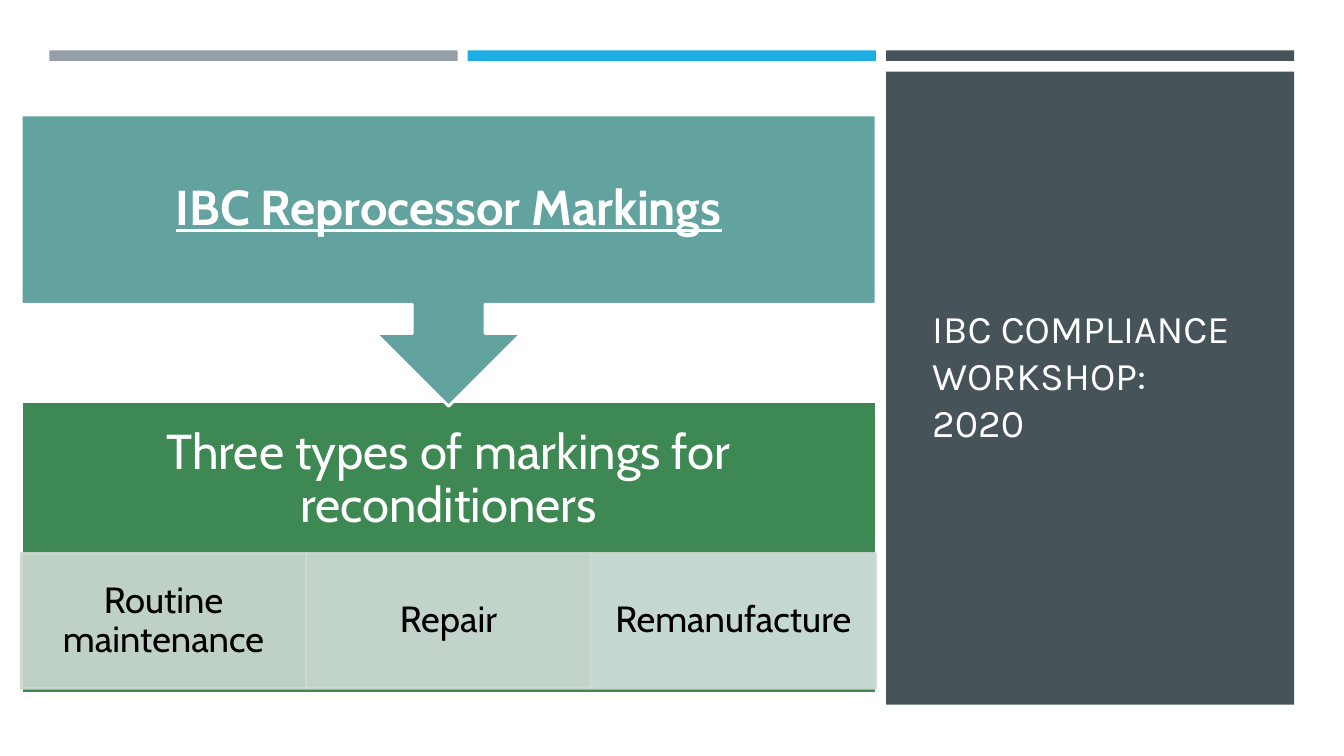
from dataclasses import dataclass

from lxml import etree
from pptx import Presentation
from pptx.dml.color import RGBColor
from pptx.enum.shapes import MSO_SHAPE as Preset
from pptx.enum.text import MSO_ANCHOR as Anchor, PP_ALIGN as Align
from pptx.oxml.ns import qn
from pptx.shapes.autoshape import Shape
from pptx.slide import Slide
from pptx.util import Pt

WHITE = RGBColor(0xFF, 0xFF, 0xFF)
TITLE_WHITE = RGBColor(0xFF, 0xFE, 0xFF)
BLACK = RGBColor(0, 0, 0)
SLATE = RGBColor(0x46, 0x53, 0x59)
GREY = RGBColor(0x96, 0x9F, 0xA7)
BLUE = RGBColor(0x1C, 0xAD, 0xE4)
GREEN = RGBColor(0x3E, 0x88, 0x53)
TEAL = RGBColor(0x62, 0xA3, 0x9F)
TILE_EDGE = RGBColor(0xCE, 0xDA, 0xD1)
TILE_MIDDLE = RGBColor(0xD1, 0xDD, 0xD7)
TILE_RIGHT = RGBColor(0xD3, 0xE0, 0xDF)

BAR_LEFT, BAR_STEP, BAR_WIDTH = 35.3, 298.8, 291.6
PANEL_LEFT = BAR_LEFT + 2 * BAR_STEP
DIAGRAM_LEFT, DIAGRAM_WIDTH = 15.1, 610.6
TILE_STEP = DIAGRAM_WIDTH / 3


@dataclass(frozen=True)
class Area:
    left: float
    top: float
    width: float
    height: float

    def lengths(self) -> tuple[Pt, Pt, Pt, Pt]:
        return Pt(self.left), Pt(self.top), Pt(self.width), Pt(self.height)


@dataclass(frozen=True)
class Label:
    text: str
    size: float
    color: RGBColor = WHITE
    font: str = "Cabin"
    align: Align = Align.CENTER
    spacing: float = 0.9
    inset_x: float = 19.4
    inset_y: float = 19.4
    strong: bool = False


@dataclass(frozen=True)
class Tile:
    text: str
    fill: RGBColor


BARS = (GREY, BLUE, SLATE)
TILES = (
    Tile("Routine maintenance", TILE_EDGE),
    Tile("Repair", TILE_MIDDLE),
    Tile("Remanufacture", TILE_RIGHT),
)


def add_block(page: Slide, area: Area, fill: RGBColor,
              line: RGBColor | None = None, weight: float = 2,
              preset: Preset = Preset.RECTANGLE) -> Shape:
    block = page.shapes.add_shape(preset, *area.lengths())
    block.shadow.inherit = False
    block.fill.solid()
    block.fill.fore_color.rgb = fill
    if line is None:
        block.line.fill.background()
    else:
        block.line.color.rgb = line
        block.line.width = Pt(weight)
    return block


def write_label(box: Shape, label: Label) -> None:
    frame = box.text_frame
    frame.word_wrap = True
    frame.vertical_anchor = Anchor.MIDDLE
    frame.margin_left = frame.margin_right = Pt(label.inset_x)
    frame.margin_top = frame.margin_bottom = Pt(label.inset_y)
    para = frame.paragraphs[0]
    para.alignment = label.align
    para.line_spacing = label.spacing
    span = para.add_run()
    span.text = label.text
    span.font.name = label.font
    span.font.size = Pt(label.size)
    span.font.color.rgb = label.color
    span.font.bold = label.strong
    span.font.underline = label.strong


def add_label(page: Slide, area: Area, label: Label) -> None:
    write_label(page.shapes.add_textbox(*area.lengths()), label)


def set_opacity(block: Shape, percent: int) -> None:
    for color in block._element.spPr.iter(qn("a:srgbClr")):
        etree.SubElement(color, qn("a:alpha")).set("val", str(percent * 1000))


def add_panel(page: Slide) -> None:
    add_block(page, Area(PANEL_LEFT, 51.1, BAR_WIDTH, 452.2), SLATE)
    add_label(page, Area(658.8, 82.1, 236.9, 370.8),
              Label("IBC COMPLIANCE WORKSHOP: 2020", 28, TITLE_WHITE, "Karla",
                    Align.LEFT, 1, 7.2, 3.6))
    for index, color in enumerate(BARS):
        add_block(page, Area(BAR_LEFT + index * BAR_STEP, 36, BAR_WIDTH, 7.5), color)


def add_diagram(page: Slide) -> None:
    add_block(page, Area(DIAGRAM_LEFT, 286.6, DIAGRAM_WIDTH, 208.8), GREEN, WHITE)
    add_label(page, Area(DIAGRAM_LEFT, 286.6, DIAGRAM_WIDTH, 113),
              Label("Three types of markings for reconditioners", 35))
    for index, tile in enumerate(TILES):
        area = Area(DIAGRAM_LEFT + index * TILE_STEP, 395.3, TILE_STEP, 96.5)
        block = add_block(page, area, tile.fill, TILE_EDGE, 1.75)
        set_opacity(block, 90)
        write_label(block, Label(tile.text, 26, BLACK, inset_x=14.4, inset_y=2.9))
    callout = add_block(page, Area(DIAGRAM_LEFT, 82.1, DIAGRAM_WIDTH, 208.1),
                        TEAL, WHITE, preset=Preset.UP_ARROW_CALLOUT)
    callout.rotation = 180
    add_label(page, Area(DIAGRAM_LEFT, 82.1, DIAGRAM_WIDTH, 135.4),
              Label("IBC Reprocessor Markings", 35, strong=True))


def main() -> None:
    deck = Presentation()
    deck.slide_width, deck.slide_height = Pt(960), Pt(540)
    page = deck.slides.add_slide(deck.slide_layouts[6])
    add_panel(page)
    add_diagram(page)
    deck.save("out.pptx")


if __name__ == "__main__":
    main()
